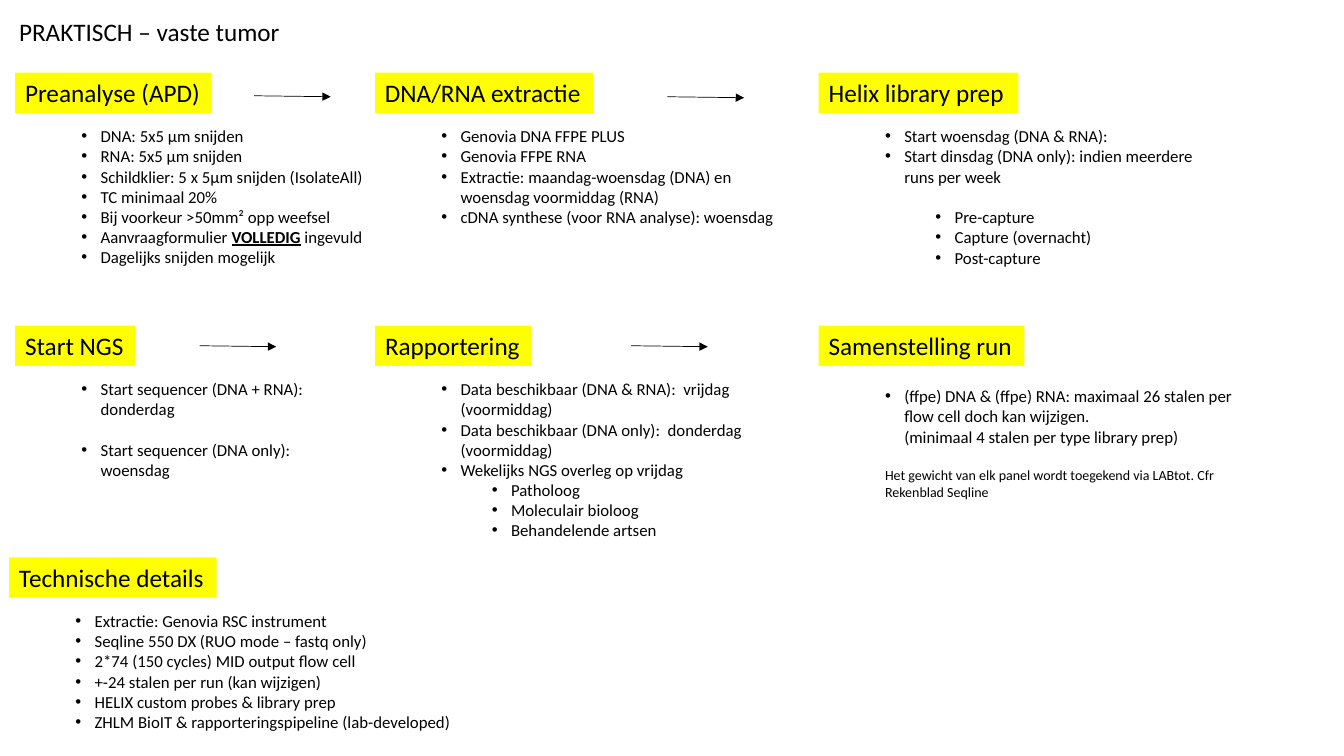
"""Build the practical workflow slide for solid tumour sequencing."""
from dataclasses import dataclass

from lxml import etree
from pptx import Presentation
from pptx import util as u
from pptx.dml.color import RGBColor
from pptx.enum import shapes, text
from pptx.oxml.ns import qn


@dataclass(frozen=True)
class Theme:
    font: str = "Calibri"
    ink: RGBColor = RGBColor(0, 0, 0)
    marker: RGBColor = RGBColor(255, 255, 0)
    heading: float = 18
    body: float = 12
    note: float = 10
    gap: float = 14.65
    rule: float = 0.5


THEME = Theme()
SLIDE = (13.33, 7.5)
COLUMNS = (0.15, 3.72, 8.12)
ROWS = (0.72, 3.23, 5.53)
HEAD_HEIGHT = 0.4
BODY_INDENT = 0.56
BODY_DROP = 0.48
HANG = 0.19
ARROW = (0.76, 0.01)

TITLE = ("PRAKTISCH – vaste tumor", (0.09, 0.11, 2.81, 0.4))

STYLES = {
    "bullet": (HANG, True, THEME.body),
    "sub": (0.5 + HANG, True, THEME.body),
    "more": (HANG, False, THEME.body),
    "note": (0, False, THEME.note),
}

STAGES = [
    {"title": "Preanalyse (APD)", "cell": (0, 0), "head": 1.95, "body": (3.2, 1.51), "lines": [
        ("bullet", "DNA: 5x5 µm snijden"),
        ("bullet", "RNA: 5x5 µm snijden"),
        ("bullet", "Schildklier: 5 x 5µm snijden (IsolateAll)"),
        ("bullet", "TC minimaal 20%"),
        ("bullet", "Bij voorkeur >50mm² opp weefsel"),
        ("bullet", "Aanvraagformulier |VOLLEDIG| ingevuld"),
        ("bullet", "Dagelijks snijden mogelijk")]},
    {"title": "DNA/RNA extractie", "cell": (1, 0), "head": 2.16, "body": (3.6, 1.51), "lines": [
        ("bullet", "Genovia DNA FFPE PLUS"),
        ("bullet", "Genovia FFPE RNA"),
        ("bullet", "Extractie: maandag-woensdag (DNA) en woensdag voormiddag (RNA)"),
        ("bullet", "cDNA synthese (voor RNA analyse): woensdag")]},
    {"title": "Helix library prep", "cell": (2, 0), "head": 1.98, "body": (3.48, 1.72), "lines": [
        ("bullet", "Start woensdag (DNA & RNA):"),
        ("bullet", "Start dinsdag (DNA only): indien meerdere runs per week"),
        ("sub", "Pre-capture", THEME.gap),
        ("sub", "Capture (overnacht)"),
        ("sub", "Post-capture")]},
    {"title": "Start NGS", "cell": (0, 1), "head": 1.19, "body": (3.15, 1.31), "lines": [
        ("bullet", "Start sequencer (DNA + RNA): donderdag"),
        ("bullet", "Start sequencer (DNA only):", THEME.gap),
        ("more", "woensdag")]},
    {"title": "Rapportering", "cell": (1, 1), "head": 1.55, "body": (3.75, 1.72), "lines": [
        ("bullet", "Data beschikbaar (DNA & RNA):  vrijdag"),
        ("more", "(voormiddag)"),
        ("bullet", "Data beschikbaar (DNA only):  donderdag"),
        ("more", "(voormiddag)"),
        ("bullet", "Wekelijks NGS overleg op vrijdag"),
        ("sub", "Patholoog"),
        ("sub", "Moleculair bioloog"),
        ("sub", "Behandelende artsen")]},
    {"title": "Samenstelling run", "cell": (2, 1), "head": 2.04, "body": (3.75, 1.45), "shift": (0, 0.07),
     "lines": [
        ("bullet", "(ffpe) DNA & (ffpe) RNA: maximaal 26 stalen per flow cell doch kan wijzigen."),
        ("more", "(minimaal 4 stalen per type library prep)"),
        ("note", "Het gewicht van elk panel wordt toegekend via LABtot. Cfr Rekenblad Seqline", THEME.gap)]},
    {"title": "Technische details", "cell": (0, 2), "head": 2.06, "body": (6.09, 1.31), "nudge": -0.06,
     "lines": [
        ("bullet", "Extractie: Genovia RSC instrument"),
        ("bullet", "Seqline 550 DX (RUO mode – fastq only)"),
        ("bullet", "2*74 (150 cycles) MID output flow cell"),
        ("bullet", "+-24 stalen per run (kan wijzigen)"),
        ("bullet", "HELIX custom probes & library prep"),
        ("bullet", "ZHLM BioIT & rapporteringspipeline (lab-developed)")]},
]

ARROWS = [(2.52, 0.95), (6.62, 0.96), (1.98, 3.43), (6.26, 3.43)]


def inches(values):
    return [u.Inches(value) for value in values]


def apply(target, values):
    for name, value in values.items():
        setattr(target, name, value)


def write(para, words, size):
    for index, part in enumerate(words.split("|")):
        span = para.add_run()
        span.text = part
        strong = index % 2 == 1
        apply(span.font, {"name": THEME.font, "size": u.Pt(size), "bold": strong, "underline": strong})
        span.font.color.rgb = THEME.ink


def indent(para, margin, bulleted):
    props = para._p.get_or_add_pPr()
    props.set("marL", str(u.Inches(margin)))
    props.set("indent", str(u.Inches(-HANG if bulleted else 0)))
    if bulleted:
        etree.SubElement(props, qn("a:buFont"), typeface="Arial")
        etree.SubElement(props, qn("a:buChar"), char="•")


def add_heading(page, words, place, fill=None):
    box = page.shapes.add_shape(shapes.MSO_SHAPE.RECTANGLE, *inches(place)) if fill else \
        page.shapes.add_textbox(*inches(place))
    if fill:
        box.shadow.inherit = False
        box.fill.solid()
        box.fill.fore_color.rgb = fill
        box.line.fill.background()
    apply(box.text_frame, {"word_wrap": True, "margin_right": 0, "vertical_anchor": text.MSO_ANCHOR.TOP})
    para = box.text_frame.paragraphs[0]
    para.alignment = text.PP_ALIGN.LEFT
    write(para, words, THEME.heading)


def add_body(page, lines, place):
    frame = page.shapes.add_textbox(*inches(place)).text_frame
    frame.word_wrap = True
    for index, (style, words, *gap) in enumerate(lines):
        para = frame.add_paragraph() if index else frame.paragraphs[0]
        margin, bulleted, size = STYLES[style]
        if gap:
            para.space_before = u.Pt(gap[0])
        indent(para, margin, bulleted)
        write(para, words, size)


def add_stage(page, stage):
    column, row = stage["cell"]
    left, top = COLUMNS[column] + stage.get("nudge", 0), ROWS[row]
    right, down = stage.get("shift", (0, 0))
    add_heading(page, stage["title"], (left, top, stage["head"], HEAD_HEIGHT), THEME.marker)
    add_body(page, stage["lines"], (left + BODY_INDENT + right, top + BODY_DROP + down, *stage["body"]))


def add_arrow(page, left, top):
    ends = inches((left, top, left + ARROW[0], top + ARROW[1]))
    arrow = page.shapes.add_connector(shapes.MSO_CONNECTOR.STRAIGHT, *ends)
    arrow.line.color.rgb = THEME.ink
    arrow.line.width = u.Pt(THEME.rule)
    etree.SubElement(arrow.line._get_or_add_ln(), qn("a:tailEnd"), type="triangle")
    etree.SubElement(arrow._element.spPr, qn("a:effectLst"))


def main():
    deck = Presentation()
    deck.slide_width, deck.slide_height = inches(SLIDE)
    page = deck.slides.add_slide(deck.slide_layouts[6])
    add_heading(page, *TITLE)
    for stage in STAGES:
        add_stage(page, stage)
    for start in ARROWS:
        add_arrow(page, *start)
    deck.save("out.pptx")


if __name__ == "__main__":
    main()
